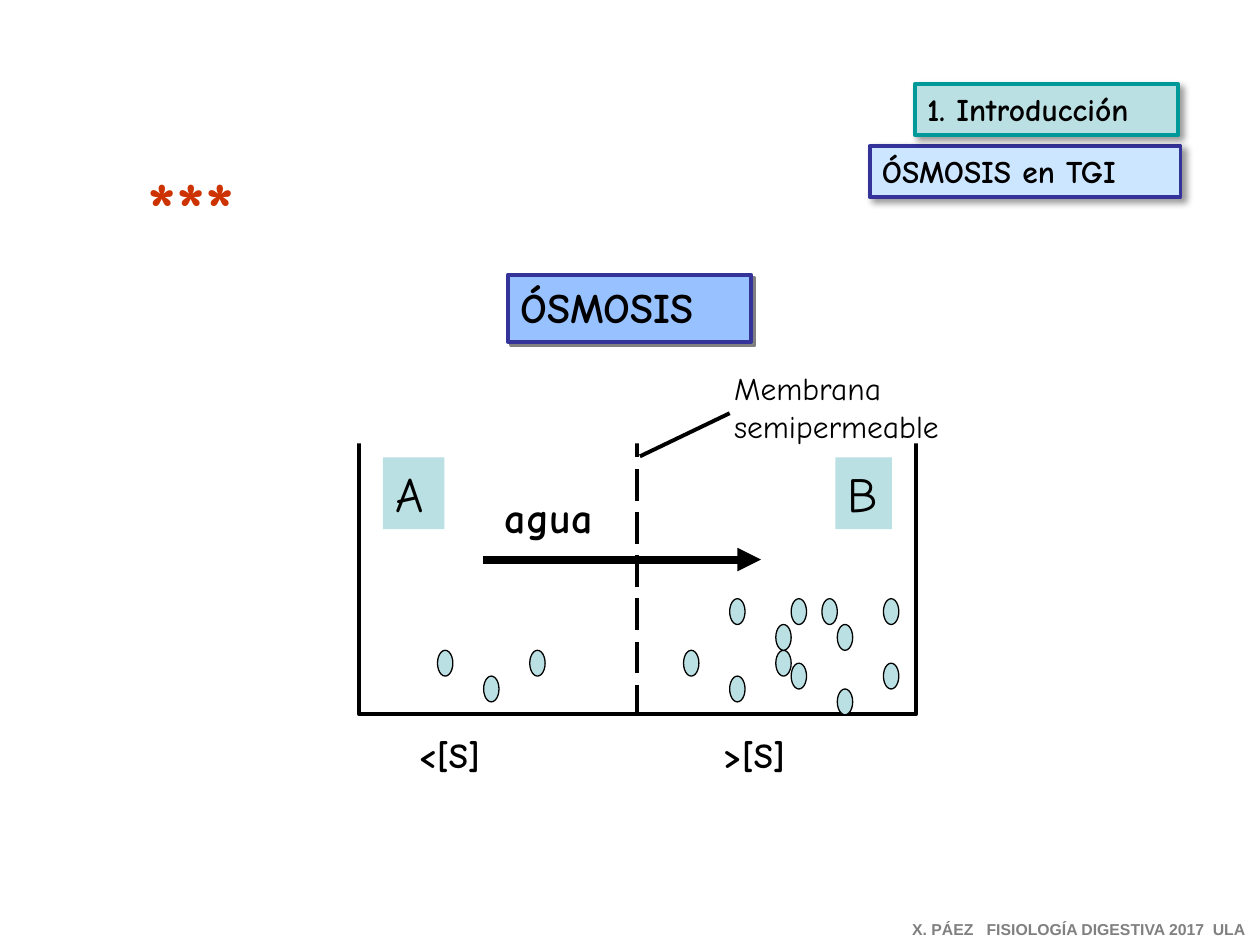
from lxml import etree
from pptx import Presentation
from pptx.dml.color import RGBColor
from pptx.enum.dml import MSO_LINE
from pptx.enum.shapes import MSO_CONNECTOR, MSO_SHAPE
from pptx.enum.text import MSO_ANCHOR, MSO_AUTO_SIZE, PP_ALIGN
from pptx.oxml.ns import qn
from pptx.util import Cm, Pt

RECTANGLE, OVAL = MSO_SHAPE.RECTANGLE, MSO_SHAPE.OVAL
STRAIGHT = MSO_CONNECTOR.STRAIGHT
LONG_DASH = MSO_LINE.LONG_DASH
TOP, LEFT, FIXED = MSO_ANCHOR.TOP, PP_ALIGN.LEFT, MSO_AUTO_SIZE.NONE

COLORS = {
    "black": "000000", "white": "FFFFFF", "grey": "808080", "red": "CC3300",
    "aqua": "BBE0E3", "teal": "009999", "navy": "333399",
    "sky": "97C1FF", "pale": "CDE6FF",
}
FONT = "Comic Neue"

# Shadows: colour, opacity in %, blur and distance in points
HARD_SHADOW = ("grey", 100, 0, 2.8)
SOFT_SHADOW = ("black", 40, 4, 3)

# Solute particles sit on a fine grid: (column, row)
GRID_LEFT, GRID_TOP, GRID_X, GRID_Y = 8.82, 12.07, 0.31, 0.26
PARTICLES_A = [(0, 4), (6, 4), (3, 6)]
PARTICLES_B = [(16, 4), (22, 4), (19, 6), (19, 0), (25, 0), (22, 2), (23, 5),
               (29, 5), (26, 7), (23, 0), (29, 0), (26, 2)]


def rgb(name):
    return RGBColor.from_string(COLORS[name])


def add_shadow(effects, color, opacity, blur, distance):
    """Put an outer shadow at 45 degrees in an effect list."""
    shadow = etree.SubElement(effects, qn("a:outerShdw"), {
        "blurRad": str(Pt(blur)), "dist": str(Pt(distance)),
        "dir": "2700000", "algn": "ctr", "rotWithShape": "0"})
    tone = etree.SubElement(shadow, qn("a:srgbClr"), val=COLORS[color])
    etree.SubElement(tone, qn("a:alpha"), val=str(opacity * 1000))


def style_shape(shape, fill=None, line=None, width=2.25, shadow=None):
    if fill:
        shape.fill.solid()
        shape.fill.fore_color.rgb = rgb(fill)
    else:
        shape.fill.background()
    if line:
        shape.line.color.rgb = rgb(line)
        shape.line.width = Pt(width)
    else:
        shape.line.fill.background()
    shape.shadow.inherit = False
    if shadow:
        add_shadow(shape._element.spPr.find(qn("a:effectLst")), *shadow)


def add_figure(page, kind, area, **style):
    shape = page.shapes.add_shape(kind, *map(Cm, area))
    style_shape(shape, **style)
    return shape


def write(shape, lines, size, bold=True, color="black", font=FONT, wrap=True):
    frame = shape.text_frame
    frame_format = {"word_wrap": wrap, "auto_size": FIXED, "vertical_anchor": TOP}
    for name, value in frame_format.items():
        setattr(frame, name, value)
    for index, line in enumerate(lines):
        para = frame.add_paragraph() if index else frame.paragraphs[0]
        para.alignment = LEFT
        span = para.add_run()
        span.text = line
        for name, value in {"name": font, "size": Pt(size), "bold": bold}.items():
            setattr(span.font, name, value)
        span.font.color.rgb = rgb(color)


def add_text(page, area, lines, size, **text_format):
    box = page.shapes.add_textbox(*map(Cm, area))
    write(box, lines, size, **text_format)
    return box


def add_line(page, start, end, width=2.25, dash=None, arrow=False):
    connector = page.shapes.add_connector(STRAIGHT, *map(Cm, start + end))
    connector.line.color.rgb = rgb("black")
    connector.line.width = Pt(width)
    if dash:
        connector.line.dash_style = dash
    if arrow:
        outline = connector.line._get_or_add_ln()
        etree.SubElement(outline, qn("a:tailEnd"), type="triangle")
    etree.SubElement(connector._element.spPr, qn("a:effectLst"))


def add_title(page):
    title = page.shapes.title
    area = {"left": 10.24, "top": 5.54, "width": 4.9, "height": 1.35}
    for name, value in area.items():
        setattr(title, name, Cm(value))
    style_shape(title, fill="sky", line="navy", shadow=HARD_SHADOW)
    write(title, ["ÓSMOSIS"], 24)


def add_tank(page):
    # Vessel and membrane
    add_figure(page, RECTANGLE, (7.24, 7.9, 11.23, 6.5), line="black")
    add_line(page, (12.85, 7.72), (12.85, 14.48), dash=LONG_DASH)

    # Solute particles
    for column, row in PARTICLES_A + PARTICLES_B:
        area = (GRID_LEFT + column * GRID_X, GRID_TOP + row * GRID_Y, 0.31, 0.52)
        add_figure(page, OVAL, area, fill="aqua", line="black", width=0.75)

    # Water flow and concentrations
    add_line(page, (9.73, 11.28), (15.34, 11.28), width=4.5, arrow=True)
    for left, label in ((8.18, "<[S]"), (14.33, ">[S]")):
        add_text(page, (left, 14.66, 1.96, 1.09), [label], 20)

    # White band that leaves the vessel open at the top
    add_figure(page, RECTANGLE, (6, 7.11, 13.41, 1.83), fill="white")
    add_text(page, (9.93, 9.78, 2.34, 1.27), ["agua"], 24)

    # Membrane label
    add_line(page, (14.71, 8.33), (12.9, 9.2))
    add_text(page, (14.55, 7.32, 4.9, 1.78), ["Membrana", "semipermeable"],
             18, bold=False)

    # Compartment letters
    for left, width, letter in ((7.72, 1.24, "A"), (16.84, 1.14, "B")):
        tile = add_figure(page, RECTANGLE, (left, 9.22, width, 1.45), fill="aqua")
        write(tile, [letter], 28, bold=False)


def add_section_labels(page):
    labels = [
        ((17.53, 2.95, 6.27, 1.02), "ÓSMOSIS en TGI", "pale", "navy"),
        ((18.44, 1.7, 5.31, 1.02), "1. Introducción", "aqua", "teal"),
    ]
    for area, label, fill, line in labels:
        box = add_figure(page, RECTANGLE, area, fill=fill, line=line,
                         shadow=SOFT_SHADOW)
        write(box, [label], 18)


def add_stars(page):
    stars = add_text(page, (2.72, 3.12, 2.97, 2.11), ["***"], 44, color="red")
    font = stars.text_frame.paragraphs[0].runs[0].font
    effects = etree.Element(qn("a:effectLst"))
    font._element.find(qn("a:solidFill")).addnext(effects)
    add_shadow(effects, "black", 100, 0, 2.8)


def main():
    deck = Presentation()
    deck.slide_width, deck.slide_height = Cm(25.4), Cm(19.05)
    page = deck.slides.add_slide(deck.slide_layouts[5])
    add_title(page)
    add_tank(page)
    add_stars(page)
    add_text(page, (18.14, 18.42, 7.26, 0.64),
             ["X. PÁEZ   FISIOLOGÍA DIGESTIVA 2017  ULA"], 9,
             color="grey", font="Arial", wrap=False)
    add_section_labels(page)
    deck.save("out.pptx")


if __name__ == "__main__":
    main()
